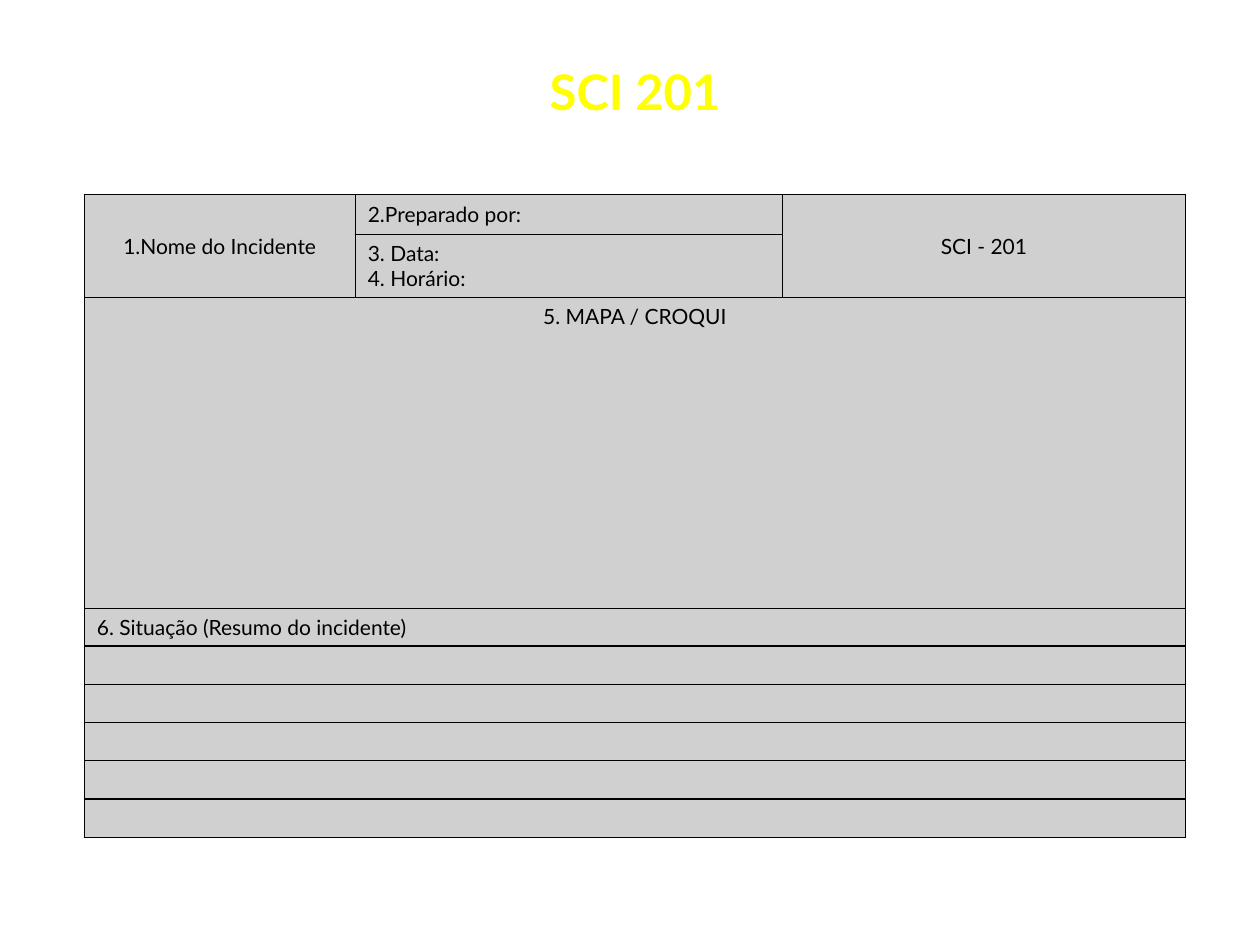
from lxml import etree
from pptx import Presentation
from pptx import util as u
from pptx.dml.color import RGBColor
from pptx.enum import text
from pptx.oxml.ns import qn

HUES = {"title": "FFFF00", "ink": "000000", "cell": "D0D0D0"}
FACE = "Lato"
TITLE = "SCI 201"
LEFT, TOP = 48.2, 111
COLS = [154.8, 244.1, 230.4]
LINE = 21.6
ROWS = [23, 36, 177.5] + [LINE] * 6
# (row, column, text, centred, anchored in the middle)
CELLS = [
    (0, 0, "1.Nome do Incidente", True, True),
    (0, 1, "2.Preparado por:", False, True),
    (0, 2, "SCI - 201", True, True),
    (1, 1, "3. Data:\n4. Horário:", False, True),
    (2, 0, "5. MAPA / CROQUI", True, False),
    (3, 0, "6. Situação (Resumo do incidente)", False, False),
]


def style(par, size, hue, mid, bold=False):
    par.alignment = text.PP_ALIGN.CENTER if mid else text.PP_ALIGN.LEFT
    font = par.font
    font.name, font.size, font.bold = FACE, u.Pt(size), bold
    font.color.rgb = RGBColor.from_string(HUES[hue])


def border(cell):
    props = cell._tc.get_or_add_tcPr()
    for side in ("lnL", "lnR", "lnT", "lnB"):
        line = etree.SubElement(props, qn("a:" + side), w=str(u.Pt(0.75)))
        fill = etree.SubElement(line, qn("a:solidFill"))
        etree.SubElement(fill, qn("a:srgbClr"), val=HUES["ink"])


def add_title(slide):
    box = slide.shapes.title
    box.left, box.top = u.Pt(139), u.Pt(31.7)
    box.width, box.height = u.Pt(447.8), u.Pt(41)
    frame = box.text_frame
    frame.text = TITLE
    frame.vertical_anchor = text.MSO_ANCHOR.MIDDLE
    style(frame.paragraphs[0], 28, "title", True, True)


def add_form(slide):
    grid = slide.shapes.add_table(
        len(ROWS), len(COLS), u.Pt(LEFT), u.Pt(TOP),
        u.Pt(sum(COLS)), u.Pt(sum(ROWS))).table
    grid.first_row = grid.horz_banding = False
    for col, wide in zip(grid.columns, COLS):
        col.width = u.Pt(wide)
    for row, high in zip(grid.rows, ROWS):
        row.height = u.Pt(high)

    for cell in grid.iter_cells():
        border(cell)
        cell.fill.solid()
        cell.fill.fore_color.rgb = RGBColor.from_string(HUES["cell"])
        # An empty cell takes its line height from the end mark
        mark = cell.text_frame.paragraphs[0]._p.get_or_add_endParaRPr()
        mark.set("sz", "1200")

    for col in (0, 2):
        grid.cell(0, col).merge(grid.cell(1, col))
    for row in range(2, len(ROWS)):
        grid.cell(row, 0).merge(grid.cell(row, len(COLS) - 1))

    for row, col, words, mid, centre in CELLS:
        cell = grid.cell(row, col)
        cell.text = words
        if centre:
            cell.vertical_anchor = text.MSO_ANCHOR.MIDDLE
        for par in cell.text_frame.paragraphs:
            style(par, 12, "ink", mid)


def main():
    deck = Presentation()
    deck.slide_width, deck.slide_height = u.Pt(720), u.Pt(540)
    slide = deck.slides.add_slide(deck.slide_layouts[5])
    add_title(slide)
    add_form(slide)
    deck.save("out.pptx")


if __name__ == "__main__":
    main()
